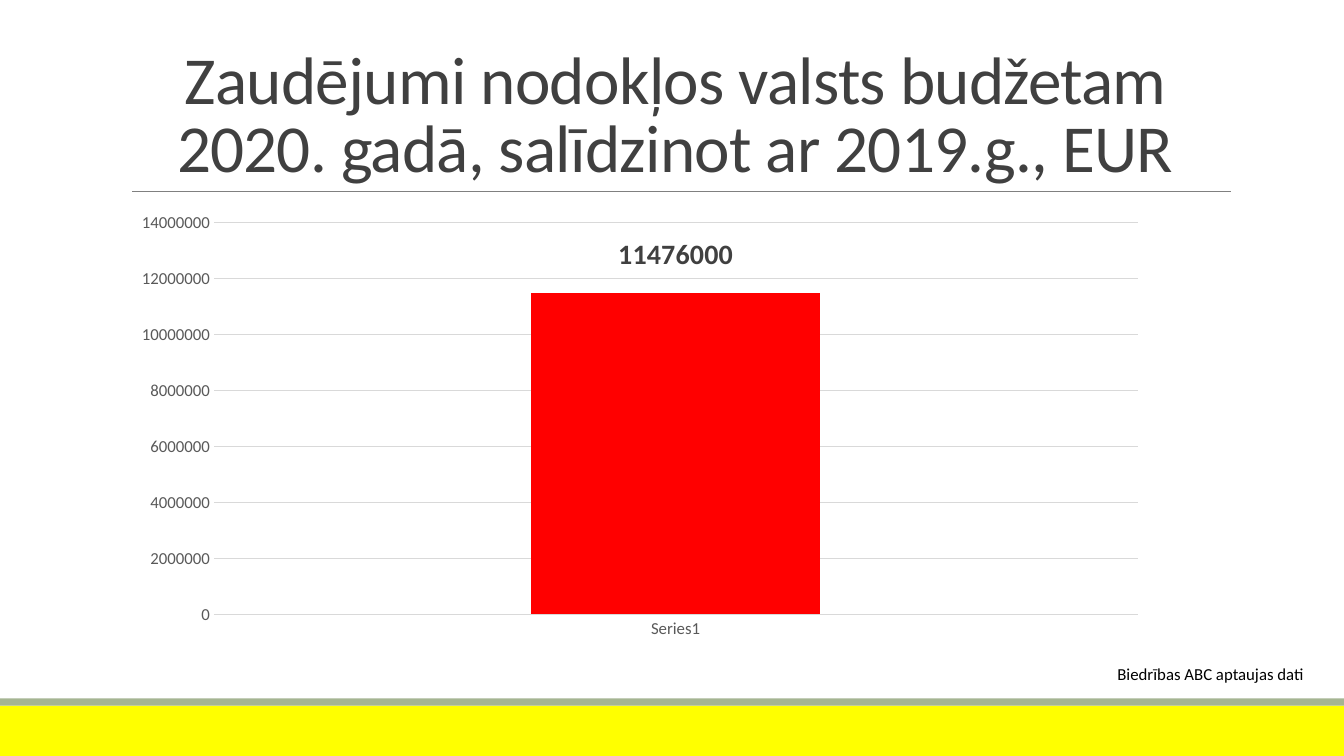
from lxml import etree
from pptx import Presentation
from pptx.chart.data import CategoryChartData
from pptx.dml.color import RGBColor
from pptx.enum.chart import XL_CHART_TYPE, XL_LABEL_POSITION, XL_TICK_MARK
from pptx.enum.shapes import MSO_CONNECTOR, MSO_SHAPE
from pptx.enum.text import MSO_ANCHOR, PP_ALIGN
from pptx.oxml import parse_xml
from pptx.oxml.ns import nsdecls, qn
from pptx.util import Cm, Pt

COLUMN_CLUSTERED = XL_CHART_TYPE.COLUMN_CLUSTERED
OUTSIDE_END = XL_LABEL_POSITION.OUTSIDE_END
NO_TICK = XL_TICK_MARK.NONE
STRAIGHT = MSO_CONNECTOR.STRAIGHT
RECTANGLE = MSO_SHAPE.RECTANGLE
BOTTOM = MSO_ANCHOR.BOTTOM
CENTER = PP_ALIGN.CENTER

YELLOW = RGBColor(0xFF, 0xFF, 0x00)
SAGE = RGBColor(0xA5, 0xB5, 0x92)
RULE_GREY = RGBColor(0x80, 0x80, 0x80)
TITLE_GREY = RGBColor(0x40, 0x40, 0x40)
AXIS_GREY = RGBColor(0x59, 0x59, 0x59)
GRID_GREY = RGBColor(0xD9, 0xD9, 0xD9)
RED = RGBColor(0xFF, 0x00, 0x00)
BLACK = RGBColor(0x00, 0x00, 0x00)

FONT = "Calibri"
SLIDE_WIDTH, SLIDE_HEIGHT = Cm(33.87), Cm(19.05)


def format_font(font, size, color, bold=False):
    values = {"name": FONT, "size": Pt(size), "bold": bold}
    for attribute, value in values.items():
        setattr(font, attribute, value)
    font.color.rgb = color


def format_line(line, color, width):
    line.color.rgb = color
    line.width = Pt(width)


def add_footer_bands(slide, left, top, width, height):
    """Draw a thin sage strip above a yellow band."""
    strip = Cm(0.18)
    bands = ((YELLOW, top + strip, height - strip), (SAGE, top, strip))
    for color, band_top, band_height in bands:
        band = slide.shapes.add_shape(RECTANGLE, left, band_top, width, band_height)
        band.shadow.inherit = False
        band.fill.solid()
        band.fill.fore_color.rgb = color
        band.line.fill.background()


def add_title(slide, left, top, width, height):
    """Place the title at the bottom of its box, with a rule under it."""
    frame = slide.shapes.add_textbox(left, top, width, height).text_frame
    frame.word_wrap = True
    frame.vertical_anchor = BOTTOM
    paragraph = frame.paragraphs[0]
    paragraph.alignment = CENTER
    paragraph.line_spacing = 0.85
    run = paragraph.add_run()
    run.text = "Zaudējumi nodokļos valsts budžetam 2020. gadā, salīdzinot ar 2019.g., EUR"
    format_font(run.font, 48, TITLE_GREY)
    run.font._element.set("spc", "-50")

    bottom = top + height
    rule_left = left + Cm(0.28)
    rule = slide.shapes.add_connector(
        STRAIGHT, rule_left, bottom, rule_left + Cm(27.69), bottom)
    format_line(rule.line, RULE_GREY, 0.5)
    etree.SubElement(rule._element.spPr, qn("a:effectLst"))


def format_axes(chart):
    for axis in (chart.category_axis, chart.value_axis):
        axis.major_tick_mark = axis.minor_tick_mark = NO_TICK
        format_font(axis.tick_labels.font, 12, AXIS_GREY)
    format_line(chart.category_axis.format.line, GRID_GREY, 0.75)
    value_axis = chart.value_axis
    value_axis.minimum_scale = 0
    value_axis.maximum_scale = 14000000
    value_axis.major_unit = 2000000
    value_axis.format.line.fill.background()
    format_line(value_axis.major_gridlines.format.line, GRID_GREY, 0.75)


def raise_label(chart, share):
    """Move the value label up by a share of the chart height, without a leader line."""
    label = chart._chartSpace.xpath(".//c:dLbl")[0]
    label.find(qn("c:idx")).addnext(parse_xml(
        f'<c:layout {nsdecls("c")}><c:manualLayout>'
        f'<c:x val="0"/><c:y val="{-share}"/>'
        '</c:manualLayout></c:layout>'))
    for leader_lines in chart._chartSpace.xpath(".//c:showLeaderLines"):
        leader_lines.set("val", "0")


def add_loss_chart(slide, left, top, width, height):
    data = CategoryChartData()
    data.categories = ["Series1"]
    data.add_series("Series 1", [11476000])
    chart = slide.shapes.add_chart(
        COLUMN_CLUSTERED, left, top, width, height, data).chart
    chart.has_legend = False
    chart.has_title = False
    format_font(chart.font, 10, BLACK)
    format_axes(chart)

    plot = chart.plots[0]
    plot.gap_width = 219
    plot.overlap = -27
    plot.vary_by_categories = False
    series = plot.series[0]
    series.format.fill.solid()
    series.format.fill.fore_color.rgb = RED
    label = series.points[0].data_label
    format_font(label.font, 20, TITLE_GREY, bold=True)
    label.position = OUTSIDE_END
    raise_label(chart, 0.04)


def add_source_note(slide, left, top, width, height):
    frame = slide.shapes.add_textbox(left, top, width, height).text_frame
    frame.word_wrap = False
    run = frame.paragraphs[0].add_run()
    run.text = "Biedrības ABC aptaujas dati"
    format_font(run.font, 12, BLACK)


def main():
    presentation = Presentation()
    presentation.slide_width = SLIDE_WIDTH
    presentation.slide_height = SLIDE_HEIGHT
    slide = presentation.slides.add_slide(presentation.slide_layouts[6])
    footer_height = Cm(1.45)
    add_footer_bands(slide, 0, SLIDE_HEIGHT - footer_height, SLIDE_WIDTH, footer_height)
    add_title(slide, Cm(3.05), Cm(0.79), Cm(27.94), Cm(4.04))
    add_loss_chart(slide, Cm(3.05), Cm(5.13), Cm(26.14), Cm(11.18))
    add_source_note(slide, Cm(27.91), Cm(16.61), Cm(5.7), Cm(0.76))
    presentation.save("out.pptx")


if __name__ == "__main__":
    main()
